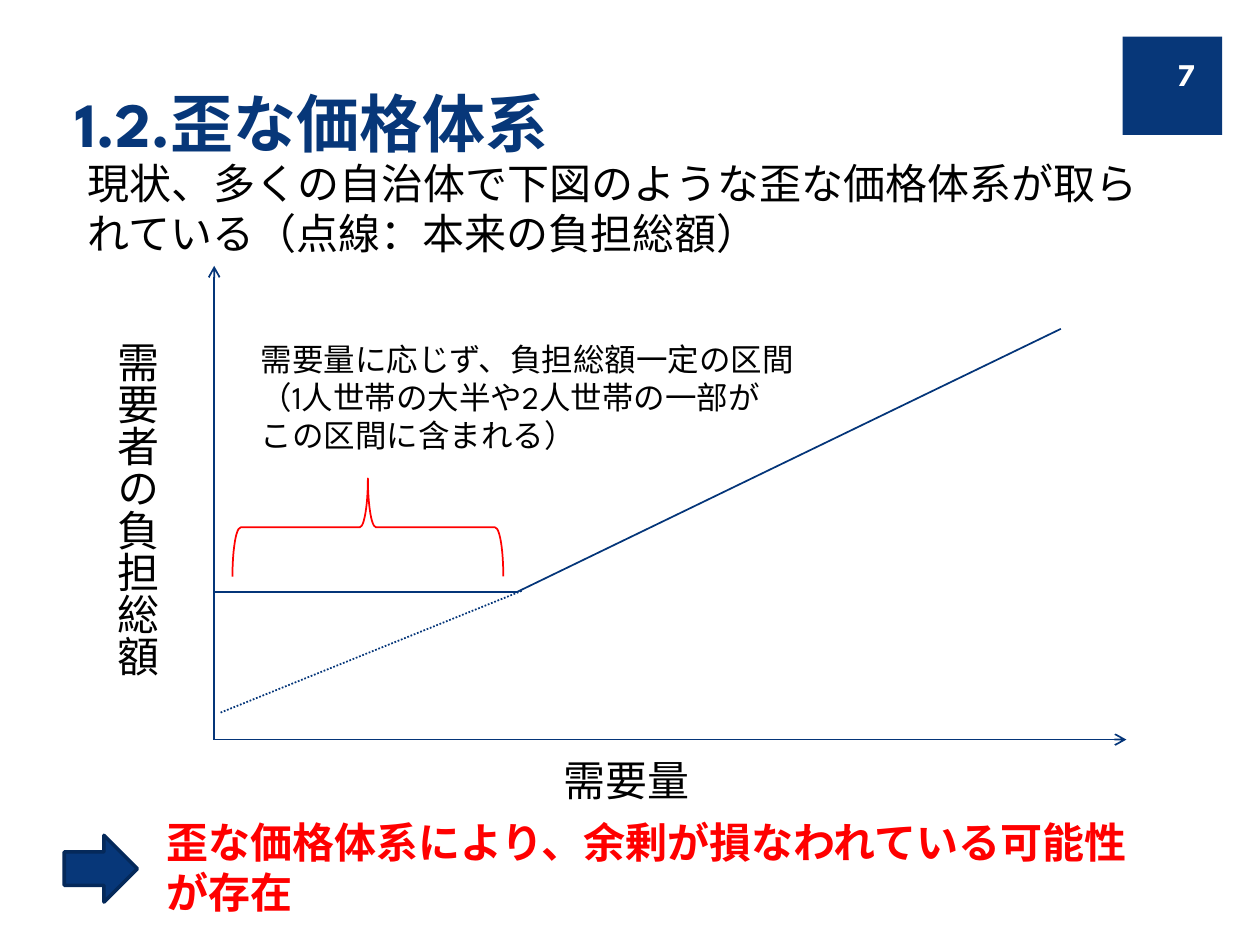
from pptx import Presentation
from pptx.dml.color import RGBColor
from pptx.enum.dml import MSO_LINE
from pptx.enum.shapes import MSO_CONNECTOR, MSO_SHAPE
from pptx.enum.text import MSO_ANCHOR, MSO_AUTO_SIZE, PP_ALIGN
from pptx.oxml.ns import qn
from pptx.util import Inches, Pt
from lxml.etree import SubElement

NAVY = RGBColor(0x07, 0x37, 0x79)
BLUE = RGBColor(0x04, 0x35, 0x79)
EDGE = RGBColor(0x05, 0x29, 0x5A)
RED = RGBColor(0xFF, 0x00, 0x00)
BLACK = RGBColor(0x00, 0x00, 0x00)
WHITE = RGBColor(0xFF, 0xFF, 0xFF)


def apply(target, values):
    for name, value in values.items():
        setattr(target, name, value)


class Board:
    """Holds the text style and the current slide."""

    font = {"name": "League Spartan", "size": Pt(24), "bold": False}

    def __init__(self, slide):
        self.slide = slide
        self.shapes = slide.shapes

    def letter(self, frame, lines, color, align=PP_ALIGN.LEFT, **style):
        frame.text = "\n".join(lines)
        for para in frame.paragraphs:
            para.alignment = align
            for run in para.runs:
                apply(run.font, {**self.font, **style})
                run.font.color.rgb = color

    def title(self, text, box):
        head = self.shapes.title
        apply(head, dict(zip(("left", "top", "width", "height"), map(Inches, box))))
        apply(head.text_frame, {"vertical_anchor": MSO_ANCHOR.BOTTOM,
                                "auto_size": MSO_AUTO_SIZE.NONE, "word_wrap": True})
        self.letter(head.text_frame, [text], NAVY, size=Pt(36), bold=True)

    def text(self, lines, box, color=BLACK, wrap=True, upright=False,
             anchor=MSO_ANCHOR.TOP, fit=MSO_AUTO_SIZE.SHAPE_TO_FIT_TEXT, **style):
        item = self.shapes.add_textbox(*map(Inches, box))
        frame = item.text_frame
        apply(frame, {"word_wrap": wrap, "auto_size": fit, "vertical_anchor": anchor})
        if upright:
            item._element.txBody.find(qn("a:bodyPr")).set("vert", "eaVert")
        self.letter(frame, lines, color, **style)

    def shape(self, kind, box, fill=None, edge=None, width=1):
        item = self.shapes.add_shape(kind, *map(Inches, box))
        item.shadow.inherit = False
        if fill is None:
            item.fill.background()
        else:
            item.fill.solid()
            item.fill.fore_color.rgb = fill
        if edge is None:
            item.line.fill.background()
        else:
            item.line.color.rgb = edge
            item.line.width = Pt(width)
        return item

    def line(self, start, end, arrow=False, dash=None):
        item = self.shapes.add_connector(
            MSO_CONNECTOR.STRAIGHT, *map(Inches, (*start, *end)))
        item.line.color.rgb = BLUE
        item.line.width = Pt(1)
        if dash is not None:
            item.line.dash_style = dash
        props = item._element.spPr
        if arrow:
            SubElement(props.find(qn("a:ln")), qn("a:tailEnd"), type="arrow")
        SubElement(props, qn("a:effectLst"))


def main():
    deck = Presentation()
    deck.slide_width, deck.slide_height = Inches(10), Inches(7.5)
    board = Board(deck.slides.add_slide(deck.slide_layouts[5]))

    # Page number, title and lead
    board.shape(MSO_SHAPE.RECTANGLE, (8.91, 0.29, 0.79, 0.78), fill=NAVY)
    board.title("1.2.歪な価格体系", (0.5, 0.07, 9, 1.25))
    board.text(["7"], (9.03, 0.39, 0.55, 0.4), WHITE, anchor=MSO_ANCHOR.MIDDLE,
               fit=MSO_AUTO_SIZE.NONE, align=PP_ALIGN.RIGHT, size=Pt(18), bold=True)
    board.text(["現状、多くの自治体で下図のような歪な価格体系が取られている（点線：本来の負担総額）"],
               (0.6, 1.2, 8.57, 0.91))

    # Axes and their labels
    origin = (1.7, 5.87)
    board.line(origin, (1.7, 2.11), arrow=True)
    board.line(origin, (8.94, 5.87), arrow=True)
    board.text(["需要者の負担総額"], (0.73, 2.61, 0.61, 2.66), wrap=False, upright=True)
    board.text(["需要量"], (4.37, 5.94, 1.21, 0.49), wrap=False)

    # Price line: flat, then rising; dotted where it should have been
    bend = (4.1, 4.7)
    board.line((1.7, 4.7), bend)
    board.line(bend, (8.42, 2.61))
    board.line((4.14, 4.69), (1.74, 5.66), dash=MSO_LINE.ROUND_DOT)

    # Brace over the flat part, with its note
    brace = board.shape(MSO_SHAPE.RIGHT_BRACE, (2.53, 3.11, 0.78, 2.15), edge=RED)
    brace.rotation = 90
    brace._element.spPr.get_or_add_xfrm().set("flipH", "1")
    board.text(["需要量に応じず、負担総額一定の区間",
                "（1人世帯の大半や2人世帯の一部が",
                "この区間に含まれる）"], (1.97, 2.65, 4.6, 0.99), size=Pt(18))

    # Conclusion
    board.shape(MSO_SHAPE.RIGHT_ARROW, (0.51, 6.63, 0.58, 0.53), NAVY, EDGE, 2)
    board.text(["歪な価格体系により、余剰が損なわれている可能性", "が存在"],
               (1.22, 6.43, 7.94, 0.91), RED, wrap=False, bold=True)

    deck.save("out.pptx")


if __name__ == "__main__":
    main()
